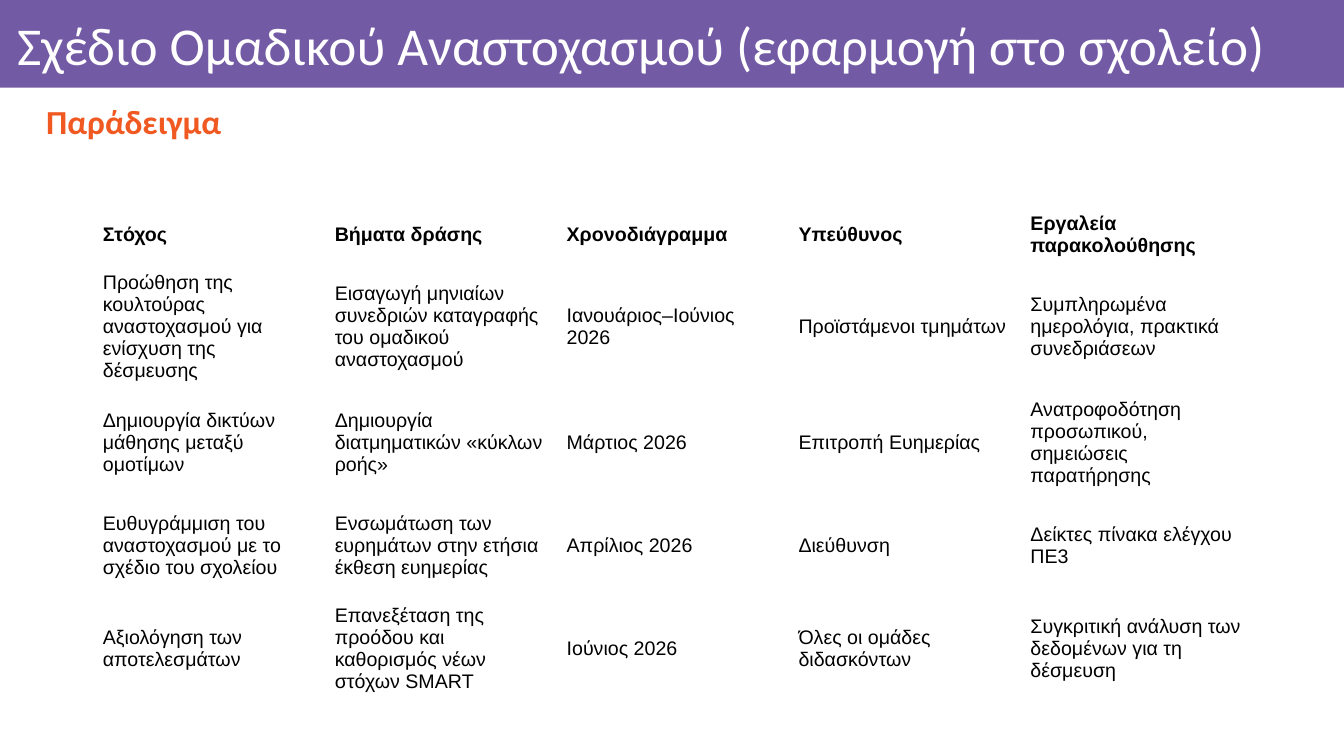
from pptx import Presentation
from pptx import util as u
from pptx.dml.color import RGBColor
from pptx.enum import shapes, text

COLUMN_WIDTH = 2.3
ROW_HEIGHTS = [0.42, 0.72, 1.01, 1.01, 0.72]
PLAN = [
    ["Στόχος", "Βήματα δράσης", "Χρονοδιάγραμμα", "Υπεύθυνος", "Εργαλεία παρακολούθησης"],
    ["Προώθηση της κουλτούρας αναστοχασμού για ενίσχυση της δέσμευσης",
     "Εισαγωγή μηνιαίων συνεδριών καταγραφής του ομαδικού αναστοχασμού",
     "Ιανουάριος–Ιούνιος 2026", "Προϊστάμενοι τμημάτων",
     "Συμπληρωμένα ημερολόγια, πρακτικά συνεδριάσεων"],
    ["Δημιουργία δικτύων μάθησης μεταξύ ομοτίμων",
     "Δημιουργία διατμηματικών «κύκλων ροής»",
     "Μάρτιος 2026", "Επιτροπή Ευημερίας",
     "Ανατροφοδότηση προσωπικού, σημειώσεις παρατήρησης"],
    ["Ευθυγράμμιση του αναστοχασμού με το σχέδιο του σχολείου",
     "Ενσωμάτωση των ευρημάτων στην ετήσια έκθεση ευημερίας",
     "Απρίλιος 2026", "Διεύθυνση", "Δείκτες πίνακα ελέγχου ΠΕ3"],
    ["Αξιολόγηση των αποτελεσμάτων",
     "Επανεξέταση της προόδου και καθορισμός νέων στόχων SMART",
     "Ιούνιος 2026", "Όλες οι ομάδες διδασκόντων",
     "Συγκριτική ανάλυση των δεδομένων για τη δέσμευση"],
]


def color(value):
    return RGBColor.from_string(value)


def assign(target, values):
    for name, value in values.items():
        setattr(target, name, value)


def write(para, words, fill, **font):
    span = para.add_run()
    span.text = words
    assign(span.font, font)
    span.font.color.rgb = color(fill)


def add_band(page, width, height, fill):
    band = page.shapes.add_shape(shapes.MSO_SHAPE.RECTANGLE, 0, 0, width, height)
    band.shadow.inherit = False
    band.fill.solid()
    band.fill.fore_color.rgb = color(fill)
    band.line.fill.background()


def add_line_of_text(page, place, margins, words, fill, **font):
    box = page.shapes.add_textbox(*map(u.Inches, place))
    frame = box.text_frame
    side, edge = map(u.Inches, margins)
    assign(frame, {
        "word_wrap": True,
        "vertical_anchor": text.MSO_ANCHOR.MIDDLE,
        "margin_left": side, "margin_right": side,
        "margin_top": edge, "margin_bottom": edge,
    })
    para = frame.paragraphs[0]
    para.line_spacing = 0.9
    write(para, words, fill, name="Calibri", **font)
    return para


def add_plan(page, left, top):
    rows, columns = len(PLAN), len(PLAN[0])
    size = (COLUMN_WIDTH * columns, sum(ROW_HEIGHTS))
    table = page.shapes.add_table(rows, columns, *map(u.Inches, (left, top, *size))).table
    assign(table, {"first_row": False, "horz_banding": False})
    for column in table.columns:
        column.width = u.Inches(COLUMN_WIDTH)
    for index, (entries, height) in enumerate(zip(PLAN, ROW_HEIGHTS)):
        table.rows[index].height = u.Inches(height)
        for cell, words in zip(table.rows[index].cells, entries):
            cell.fill.background()
            cell.vertical_anchor = text.MSO_ANCHOR.MIDDLE
            write(cell.text_frame.paragraphs[0], words, "000000",
                  name="Arial", size=u.Pt(14), bold=index == 0)


def main():
    deck = Presentation()
    assign(deck, {"slide_width": u.Inches(13.33), "slide_height": u.Inches(7.5)})
    page = deck.slides.add_slide(deck.slide_layouts[6])
    add_band(page, deck.slide_width, u.Inches(0.87), "735AA5")
    add_line_of_text(page, (0.11, 0.09, 13.06, 0.78), (0.06, 0.06),
                     "Σχέδιο Ομαδικού Αναστοχασμού (εφαρμογή στο σχολείο)",
                     "FFFFFF", size=u.Pt(38))
    subtitle = add_line_of_text(page, (0.11, 0.93, 13.06, 0.6), (0.1, 0.05),
                                "Παράδειγμα", "F05A22", size=u.Pt(24), bold=True)
    subtitle.alignment = text.PP_ALIGN.JUSTIFY
    properties = subtitle._p.get_or_add_pPr()
    properties.set("marL", str(u.Inches(0.5)))
    properties.set("indent", str(u.Inches(-0.25)))
    add_plan(page, 0.92, 2.04)
    deck.save("out.pptx")


if __name__ == "__main__":
    main()
